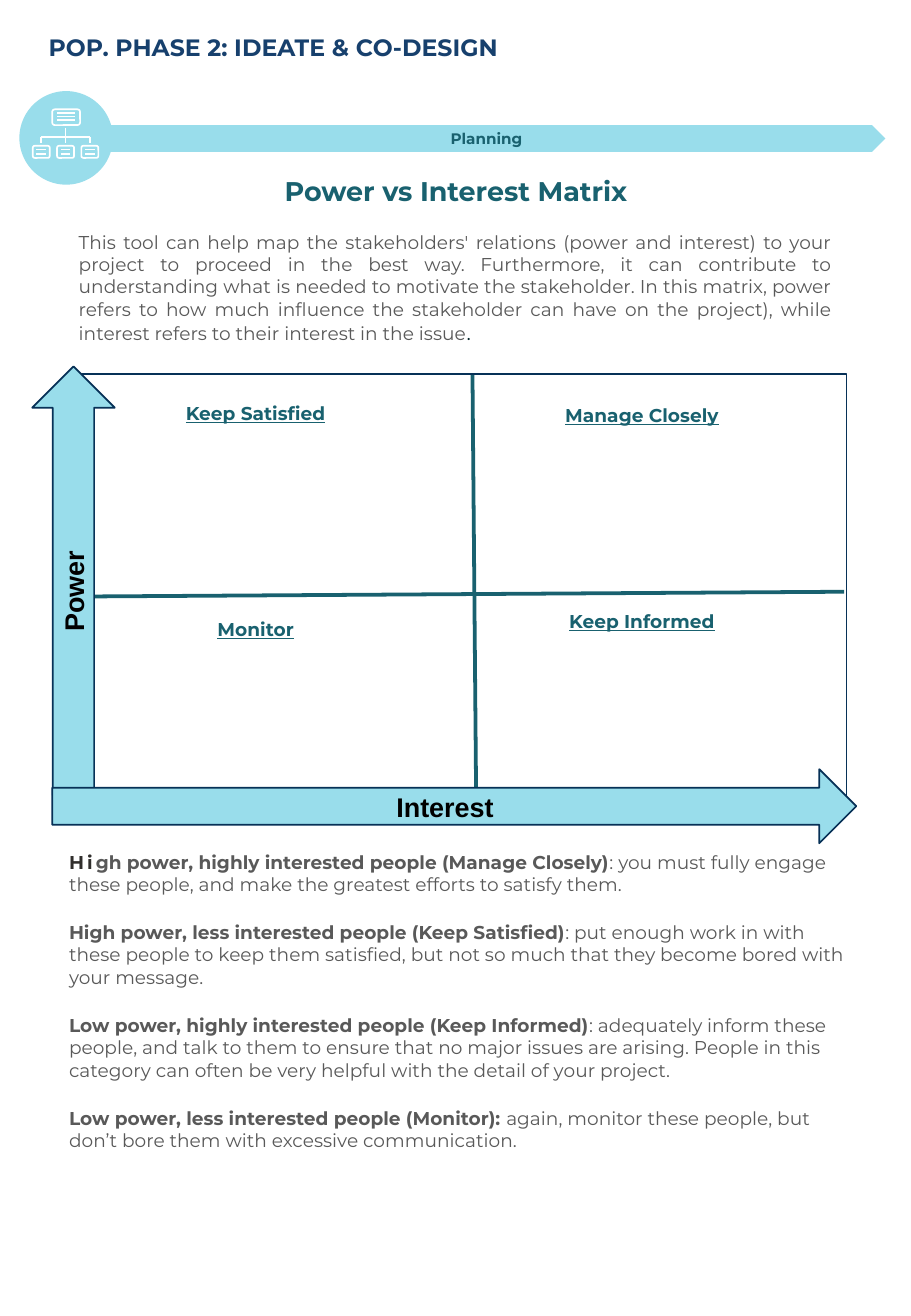
from lxml.etree import SubElement
from pptx import Presentation
from pptx.dml.color import RGBColor
from pptx.enum.shapes import MSO_CONNECTOR, MSO_SHAPE as SHAPE
from pptx.enum.text import MSO_ANCHOR as ANCHOR, MSO_AUTO_SIZE, PP_ALIGN as ALIGN
from pptx.oxml.ns import qn
from pptx.util import Pt

PX = 9144  # 100 px to the inch
TEAL, SKY, NAVY, GREY, WHITE = "19616F", "99DDEB", "073157", "595959", "FFFFFF"
color = RGBColor.from_string


def write(para, text, size=11, hue=GREY, font="Montserrat", bold=False,
          underline=False, spacing=0, align=ALIGN.LEFT):
    para.alignment = align
    span = para.add_run()
    span.text = text
    span.font.size = Pt(size)
    span.font.name = font
    span.font.bold = bold
    span.font.underline = underline
    span.font.color.rgb = color(hue)
    if spacing:
        span._r.get_or_add_rPr().set("spc", str(round(spacing * 100)))


def draw_line(x1, y1, x2, y2, hue, width):
    ends = [PX * value for value in (x1, y1, x2, y2)]
    line = page.shapes.add_connector(MSO_CONNECTOR.STRAIGHT, *ends)
    line.line.color.rgb = color(hue)
    line.line.width = Pt(width)
    SubElement(line._element.spPr, qn("a:effectLst"))


deck = Presentation()
deck.slide_width, deck.slide_height = PX * 750, PX * 1083
page = deck.slides.add_slide(deck.slide_layouts[5])

# Title
title = page.shapes.title
title.left, title.top, title.width, title.height = [PX * v for v in (30, 22, 700, 57)]
title.text_frame.vertical_anchor = ANCHOR.TOP
title.text_frame.auto_size = MSO_AUTO_SIZE.NONE
write(title.text_frame.paragraphs[0], "POP. PHASE 2: IDEATE & CO-DESIGN",
      size=14, hue="17406D", bold=True)

# Heading, introduction and explanation boxes
frames = []
for area in ((191, 139, 369, 37), (55, 185, 640, 104), (47, 695, 667, 259)):
    box = page.shapes.add_textbox(*[PX * v for v in area])
    box.text_frame.word_wrap = True
    frames.append(box.text_frame)
heading, intro, explanation = frames

write(heading.paragraphs[0], "Power vs Interest Matrix",
      size=16, hue=TEAL, bold=True, align=ALIGN.CENTER)

write(intro.paragraphs[0],
      "This tool can help map the stakeholders' relations (power and interest) to your "
      "project to proceed in the best way. Furthermore, it can contribute to understanding "
      "what is needed to motivate the stakeholder. In this matrix, power refers to how much "
      "influence the stakeholder can have on the project), while interest refers to their "
      "interest in the issue", align=ALIGN.JUSTIFY)
write(intro.paragraphs[0], ".", size=12, hue="002328", align=ALIGN.JUSTIFY)

groups = (
    ("gh power, highly interested people (Manage Closely)",
     ": you must fully engage these people, and make the greatest efforts to satisfy them."),
    ("High power, less interested people (Keep Satisfied)",
     ": put enough work in with these people to keep them satisfied, but not so much that "
     "they become bored with your message."),
    ("Low power, highly interested people (Keep Informed)",
     ": adequately inform these people, and talk to them to ensure that no major issues are "
     "arising. People in this category can often be very helpful with the detail of your "
     "project."),
    ("Low power, less interested people (Monitor): ",
     "again, monitor these people, but don’t bore them with excessive communication."),
)
for index, (who, advice) in enumerate(groups):
    if index:
        para = explanation.add_paragraph()
        para.space_before = Pt(15.4)
    else:
        para = explanation.paragraphs[0]
        write(para, "Hi", hue="302E2C", bold=True, spacing=1.8)
    write(para, who, bold=True)
    write(para, advice)

# Quadrant labels
for name, left, top in (("Keep Satisfied", 123, 326), ("Manage Closely", 441, 328),
                        ("Monitor", 123, 504), ("Keep Informed", 441, 497)):
    box = page.shapes.add_textbox(PX * left, PX * top, PX * 175, PX * 38)
    label = box.text_frame
    label.word_wrap = True
    label.margin_left = label.margin_right = PX * 6
    label.margin_top, label.margin_bottom = PX * 2, PX * 3
    label.paragraphs[0].line_spacing = 1.15
    write(label.paragraphs[0], name, hue=TEAL, bold=True, underline=True, align=ALIGN.CENTER)

# Matrix dividers
draw_line(54, 491, 695, 487, TEAL, 2.25)
draw_line(389, 308, 392, 654, TEAL, 2.25)

# Banner, matrix frame, axis arrows, icon disc and icon cards
AXIS = dict(size=16, hue="000000", font="Arial")
shapes = [
    (SHAPE.CHEVRON, (72, 103, 657, 22), SKY, None, 0, "Planning", dict(size=9, hue=TEAL)),
    (SHAPE.RECTANGLE, (55, 308, 642, 347), None, NAVY, 0, "", {}),
    (SHAPE.RIGHT_ARROW, (-116, 444, 353, 68), SKY, NAVY, 270, "Power", AXIS),
    (SHAPE.RIGHT_ARROW, (43, 633, 662, 61), SKY, NAVY, 0, "Interest", AXIS),
    (SHAPE.OVAL, (16, 75, 77, 77), SKY, None, 0, "", {}),
    (SHAPE.ROUNDED_RECTANGLE, (43, 90, 23, 13), None, WHITE, 0, "", {}),
]
card_centers = [54 + 20 * step for step in (-1, 0, 1)]
for center in card_centers:
    shapes.append((SHAPE.ROUNDED_RECTANGLE, (center - 7, 120, 14, 10), None, WHITE, 0, "", {}))

for kind, area, fill, edge, turn, text, style in shapes:
    shape = page.shapes.add_shape(kind, *[PX * v for v in area])
    shape.shadow.inherit = False
    shape.rotation = turn
    if fill:
        shape.fill.solid()
        shape.fill.fore_color.rgb = color(fill)
    else:
        shape.fill.background()
    if edge:
        shape.line.color.rgb = color(edge)
        shape.line.width = Pt(1)
    else:
        shape.line.fill.background()
    if text:
        shape.text_frame.vertical_anchor = ANCHOR.MIDDLE
        write(shape.text_frame.paragraphs[0], text, bold=True, align=ALIGN.CENTER, **style)

# Icon branches and the text strokes on its cards
draw_line(54, 105, 54, 113, WHITE, 1)
draw_line(card_centers[0], 113, card_centers[-1], 113, WHITE, 1)
for y in (93, 96, 99):
    draw_line(47, y, 62, y, WHITE, 1)
for center in card_centers:
    draw_line(center, 113, center, 118, WHITE, 1)
    for y in (123, 127):
        draw_line(center - 4, y, center + 4, y, WHITE, 1)

deck.save("out.pptx")
